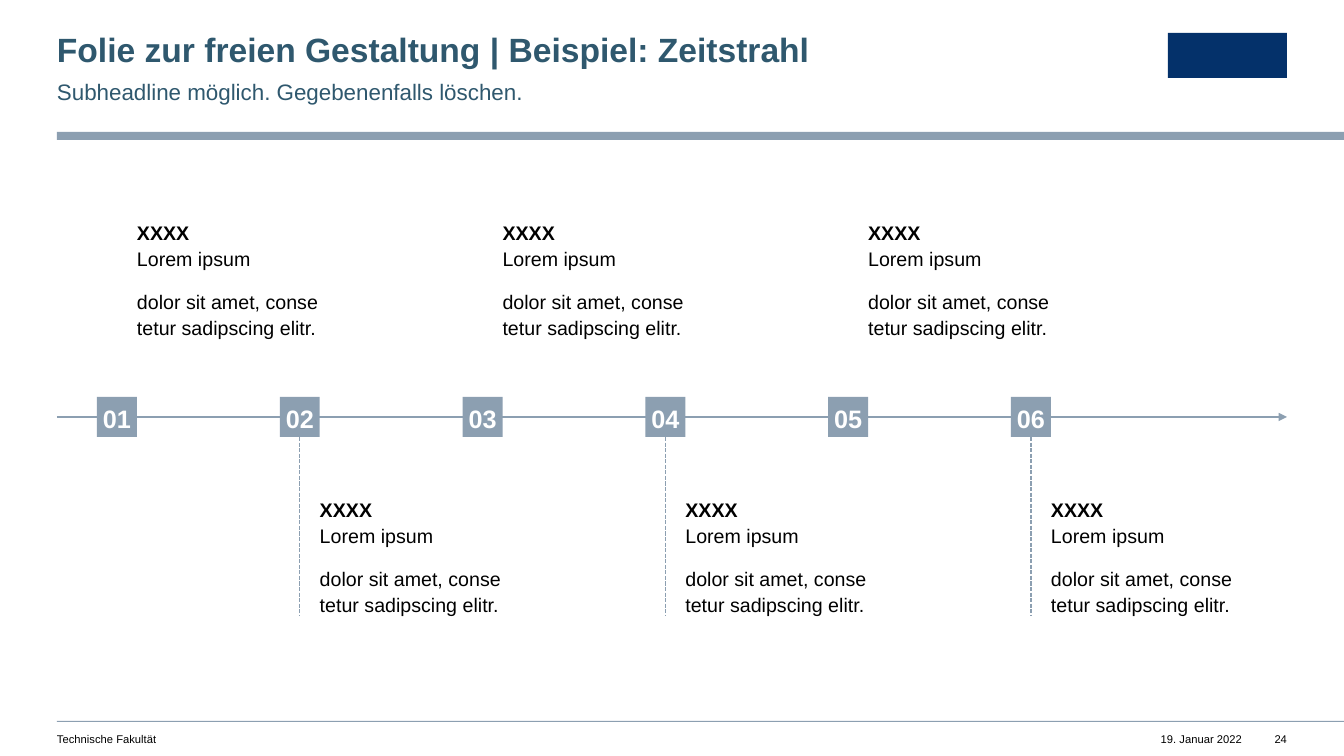
from lxml.etree import SubElement
from pptx import Presentation
from pptx.dml.color import RGBColor
from pptx.enum.dml import MSO_LINE
from pptx.enum.shapes import MSO_CONNECTOR, MSO_SHAPE
from pptx.enum.text import MSO_ANCHOR, PP_ALIGN
from pptx.oxml.ns import qn
from pptx.util import Inches, Pt

TITLE = "Folie zur freien Gestaltung | Beispiel: Zeitstrahl"
SUBTITLE = "Subheadline möglich. Gegebenenfalls löschen."
FACULTY, DATE, PAGE = "Technische Fakultät", "19. Januar 2022", "24"
ENTRY = ("XXXX", "Lorem ipsum", "dolor sit amet, conse\vtetur sadipscing elitr.")
MILESTONES = [(number, *ENTRY) for number in ("01", "02", "03", "04", "05", "06")]

TEAL = RGBColor(0x2F, 0x58, 0x6E)
STEEL = RGBColor(0x8C, 0x9F, 0xB1)
NAVY = RGBColor(0x04, 0x31, 0x6A)
BLACK = RGBColor(0, 0, 0)
WHITE = RGBColor(0xFF, 0xFF, 0xFF)

WIDTH, HEIGHT = 1344, 756
LEFT, RIGHT = 57, 1287
AXIS_Y, MARKER = 417, 40
FIRST_X, LAST_X = 97, 1011
ENTRY_W, ENTRY_H = 197, 119
UPPER_Y, LOWER_Y, DASH_END = 219, 496, 616


def px(n):
    return round(n * Inches(1) / 100.8)


def box(*rect):
    return [px(n) for n in rect]


def add_rect(rect, color):
    sp = s.shapes.add_shape(MSO_SHAPE.RECTANGLE, *box(*rect))
    sp.shadow.inherit = False
    sp.fill.solid()
    sp.fill.fore_color.rgb = color
    sp.line.fill.background()
    return sp


def add_line(x1, y1, x2, y2):
    line = s.shapes.add_connector(MSO_CONNECTOR.STRAIGHT, *box(x1, y1, x2, y2))
    line.line.color.rgb = STEEL
    line.line.width = Pt(1)
    SubElement(line._element.spPr, qn("a:effectLst"))
    return line


def prepare(tf):
    tf.margin_left = tf.margin_top = tf.margin_right = tf.margin_bottom = 0
    tf.word_wrap = True
    return tf


def style(p, size, color, bold=None, align=PP_ALIGN.LEFT, spacing=None, after=None):
    p.font.name = "Arial"
    p.font.size = Pt(size)
    p.font.color.rgb = color
    p.font.bold = bold
    p.alignment = align
    p.line_spacing = spacing
    p.space_after = after


def add_text(rect, text, size, color, **kw):
    tf = prepare(s.shapes.add_textbox(*box(*rect)).text_frame)
    p = tf.paragraphs[0]
    p.text = text
    style(p, size, color, **kw)
    return tf


def add_marker(x, number):
    sp = add_rect((x, AXIS_Y - MARKER / 2, MARKER, MARKER), STEEL)
    tf = prepare(sp.text_frame)
    tf.vertical_anchor = MSO_ANCHOR.MIDDLE
    p = tf.paragraphs[0]
    p.text = number
    style(p, 18, WHITE, bold=True, align=PP_ALIGN.CENTER, spacing=1.1, after=Pt(12))
    return sp


def add_entry(x, y, head, lead, body):
    look = dict(spacing=1.1, after=Pt(12))
    tf = add_text((x, y, ENTRY_W, ENTRY_H), f"{head}\v{lead}", 14, BLACK, **look)
    tf.paragraphs[0].runs[0].font.bold = True
    p = tf.add_paragraph()
    p.text = body
    style(p, 14, BLACK, **look)


prs = Presentation()
prs.slide_width, prs.slide_height = box(WIDTH, HEIGHT)
s = prs.slides.add_slide(prs.slide_layouts[6])

add_rect((LEFT, 132, WIDTH - LEFT, 8), STEEL)
add_rect((LEFT, 721, WIDTH - LEFT, 1), STEEL)
add_rect((1168, 33, 119, 45), NAVY)

add_text((LEFT, 33, 755, 36), TITLE, 24, TEAL, bold=True, spacing=0.9)
add_text((LEFT, 76, 755, 27), SUBTITLE, 16, TEAL, spacing=1.1, after=Pt(12))
add_text((LEFT, 732, 603, 13), FACULTY, 8, BLACK)
add_text((1148, 732, 94, 13), DATE, 8, BLACK, align=PP_ALIGN.RIGHT)
add_text((1266, 732, 21, 13), PAGE, 8, BLACK, align=PP_ALIGN.RIGHT)

axis = add_line(LEFT, AXIS_Y, RIGHT, AXIS_Y)
SubElement(axis.line._get_or_add_ln(), qn("a:tailEnd"), type="triangle")

step = (LAST_X - FIRST_X) / (len(MILESTONES) - 1)
for i, (number, *entry) in enumerate(MILESTONES):
    x = FIRST_X + i * step
    marker = add_marker(x, number)
    below = i % 2 == 1
    add_entry(x + MARKER, LOWER_Y if below else UPPER_Y, *entry)
    if below:
        center = x + MARKER / 2
        dash = add_line(center, AXIS_Y + MARKER / 2, center, DASH_END)
        dash.line.dash_style = MSO_LINE.SQUARE_DOT
        dash.begin_connect(marker, 2)

prs.save("out.pptx")
